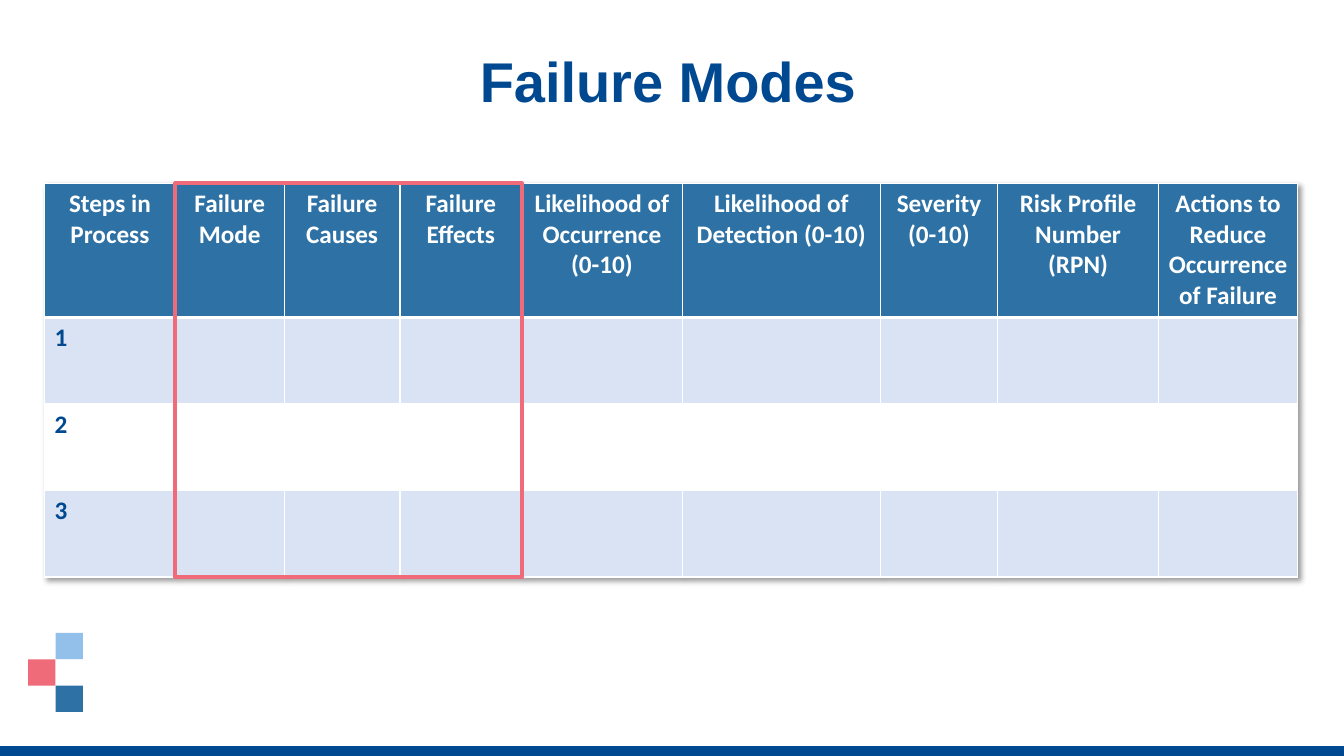
from lxml.etree import SubElement as Sub
from pptx import Presentation
from pptx.dml.color import RGBColor as RGB
from pptx.enum.shapes import MSO_SHAPE as Kind
from pptx.enum.text import MSO_ANCHOR as Anchor, MSO_AUTO_SIZE as Fit, PP_ALIGN as Align
from pptx.oxml import parse_xml
from pptx.oxml.ns import nsdecls, qn
from pptx.util import Cm, Pt

NAVY = RGB(0x00, 0x49, 0x91)
BLUE = RGB(0x2E, 0x72, 0xA5)
SKY = RGB(0x93, 0xBF, 0xEB)
MIST = RGB(0xB5, 0xD2, 0xEC)
HAZE = RGB(0xBC, 0xD7, 0xF2)
PALE = RGB(0xDA, 0xE3, 0xF3)
ROSE = RGB(0xEF, 0x6B, 0x7A)
WHITE = RGB(0xFF, 0xFF, 0xFF)

STOPS = [(0, SKY, 100), (29, MIST, 100), (54, HAZE, 69), (99, WHITE, 100)]
HEADS = [
    "Steps in Process", "Failure Mode", "Failure Causes", "Failure Effects",
    "Likelihood of Occurrence (0-10)", "Likelihood of Detection (0-10)",
    "Severity (0-10)", "Risk Profile Number (RPN)",
    "Actions to Reduce Occurrence of Failure",
]
WIDTHS = [3.3, 2.74, 2.92, 3.07, 4.04, 5, 2.95, 4.06, 3.5]
STEPS = ["1", "2", "3"]
HEAD, ROW = 3.38, 2.18


def add_box(slide, box, fill=None, line=None):
    """Add a plain rectangle with an optional fill and outline."""
    shape = slide.shapes.add_shape(Kind.RECTANGLE, *map(Cm, box))
    shape.shadow.inherit = False
    if fill is None:
        shape.fill.background()
    else:
        shape.fill.solid()
        shape.fill.fore_color.rgb = fill
    if line is None:
        shape.line.fill.background()
    else:
        shape.line.color.rgb = line
        shape.line.width = Pt(3)
    return shape


def add_run(para, text, font, size, color):
    """Add one bold run to a paragraph."""
    run = para.add_run()
    run.text = text
    run.font.name = font
    run.font.size = Pt(size)
    run.font.bold = True
    run.font.color.rgb = color


def add_sky(slide, box):
    """Add the panel that fades from blue to white."""
    shape = add_box(slide, box, SKY)
    grad = parse_xml(f'<a:gradFill {nsdecls("a")} rotWithShape="1"><a:gsLst/>'
                     '<a:lin ang="5400000" scaled="0"/></a:gradFill>')
    for pos, color, alpha in STOPS:
        stop = Sub(grad[0], qn("a:gs"), pos=str(pos * 1000))
        tint = Sub(stop, qn("a:srgbClr"), val=str(color))
        if alpha < 100:
            Sub(tint, qn("a:alpha"), val=str(alpha * 1000))
    props = shape._element.spPr
    props.replace(props.find(qn("a:solidFill")), grad)


def add_mark(slide, box):
    """Add the three stepped squares within a box."""
    left, top, width, height = box
    wide, high = width / 2, height / 3
    for row, (col, color) in enumerate([(1, SKY), (0, ROSE), (1, BLUE)]):
        add_box(slide, (left + col * wide, top + row * high, wide, high), color)


def add_title(slide, box):
    """Place and format the title placeholder above the backdrop."""
    title = slide.shapes.title
    slide.shapes._spTree.append(title._element)
    title.left, title.top, title.width, title.height = map(Cm, box)
    frame = title.text_frame
    frame.word_wrap = True
    frame.auto_size = Fit.NONE
    frame.vertical_anchor = Anchor.MIDDLE
    para = frame.paragraphs[0]
    para.alignment = Align.CENTER
    para.line_spacing = 0.9
    add_run(para, "Failure Modes", "Arial", 40, NAVY)


def style_cell(cell, fill, top, base):
    """Fill a cell and draw its white borders."""
    cell.fill.solid()
    cell.fill.fore_color.rgb = fill
    props = cell._tc.get_or_add_tcPr()
    for spot, (side, size) in enumerate(zip("LRTB", (1, 1, top, base))):
        props.insert(spot, parse_xml(
            f'<a:ln{side} {nsdecls("a")} w="{Pt(size)}"><a:solidFill>'
            f'<a:srgbClr val="{WHITE}"/></a:solidFill></a:ln{side}>'))


def add_grid(slide, box):
    """Add the failure table and frame its three failure columns."""
    left, top, width, height = box
    frame = slide.shapes.add_table(len(STEPS) + 1, len(HEADS), *map(Cm, box))
    table = frame.table
    table._tbl.tblPr.insert(0, parse_xml(
        f'<a:effectLst {nsdecls("a")}><a:outerShdw blurRad="50800" dist="38100" '
        'dir="2700000" algn="tl" rotWithShape="0"><a:srgbClr val="000000">'
        '<a:alpha val="40000"/></a:srgbClr></a:outerShdw></a:effectLst>'))
    for col, size in zip(table.columns, WIDTHS):
        col.width = Cm(size)
    for num, row in enumerate(table.rows):
        row.height = Cm(ROW if num else HEAD)
        fill = (PALE if num % 2 else WHITE) if num else BLUE
        for cell in row.cells:
            style_cell(cell, fill, 3 if num == 1 else 1, 1 if num else 3)
    for col, text in enumerate(HEADS):
        para = table.cell(0, col).text_frame.paragraphs[0]
        para.alignment = Align.CENTER
        add_run(para, text, "Calibri", 18, WHITE)
    for num, text in enumerate(STEPS, 1):
        para = table.cell(num, 0).text_frame.paragraphs[0]
        add_run(para, text, "Calibri", 18, NAVY)
    add_box(slide, (left + WIDTHS[0], top, sum(WIDTHS[1:4]), height), line=ROSE)


def main():
    """Build the slide and save it."""
    deck = Presentation()
    deck.slide_width, deck.slide_height = Cm(33.87), Cm(19.05)
    slide = deck.slides.add_slide(deck.slide_layouts[5])
    add_sky(slide, (0, 0, 33.87, 14.7))
    add_box(slide, (0, 18.8, 33.87, 0.53), NAVY)
    add_mark(slide, (0.71, 15.95, 1.38, 1.99))
    add_title(slide, (1.4, 1.07, 30.86, 2.1))
    add_grid(slide, (1.12, 4.62, sum(WIDTHS), HEAD + ROW * len(STEPS)))
    deck.save("out.pptx")


if __name__ == "__main__":
    main()
